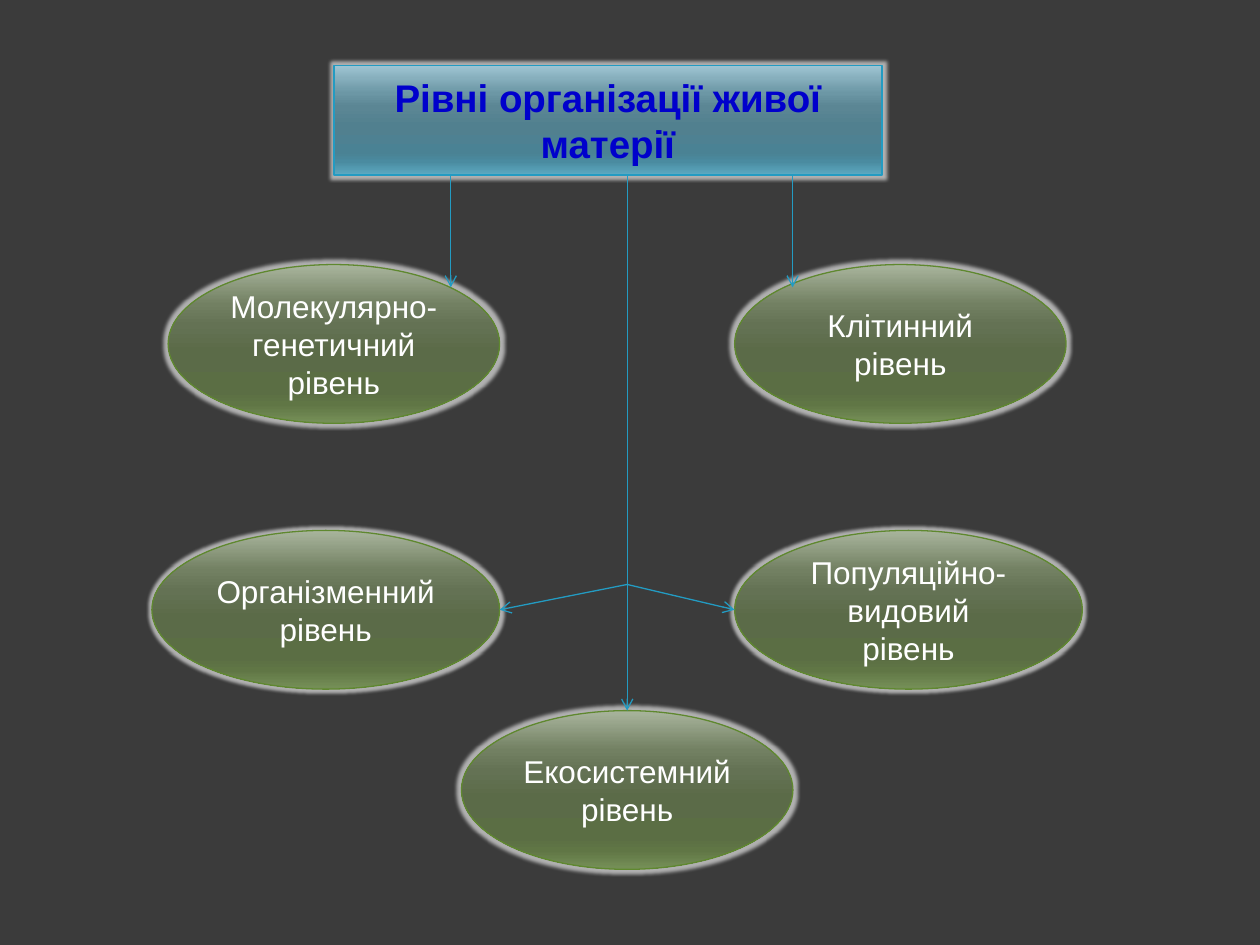
"""Builds a slide with the levels of organisation of living matter."""
from dataclasses import dataclass

from lxml import etree
from pptx import Presentation
from pptx.dml import color
from pptx.enum import shapes, text
from pptx.oxml import ns
from pptx.util import Pt


@dataclass(frozen=True)
class Theme:
    font: str = "Arial"
    title_size: int = 22
    level_size: int = 18
    line_width: float = 0.75
    glow_radius: int = 4
    background: str = "3B3B3B"
    title_text: str = "0000CC"
    level_text: str = "FFFFFF"
    blue_line: str = "239BC2"
    green_line: str = "5F882F"
    glow: str = "FFFFFF"
    stops: tuple = (0, 25, 38, 55, 80, 88, 100)
    blues: tuple = ("9EC4D2", "6C97A5", "5B8694", "51808F", "4A8294", "4A8BA0", "5DAAC2")
    greens: tuple = ("A9B59D", "728062", "647254", "5B6B48", "5B6E44", "607645", "769058")


THEME = Theme()
TITLE = "Рівні організації живої матерії"
TITLE_BOX = (190.8, 37.4, 313.2, 62.6)
TITLE_BOTTOM = TITLE_BOX[1] + TITLE_BOX[3]
AXIS, LEFT_EDGE, RIGHT_EDGE = 358.4, 285.5, 419.8
NARROW, WIDE, HEIGHT = 189.4, 198.7, 90.7
UPPER, LOWER, BOTTOM = 151.2, 303.1, 406.1
FORK, ARROW_END = 334, 164.2
SIDE_Y = LOWER + HEIGHT / 2

LEVELS = [
    ("Організменний рівень", LEFT_EDGE - WIDE, LOWER, WIDE),
    ("Молекулярно-генетичний рівень", LEFT_EDGE - NARROW, UPPER, NARROW),
    ("Клітинний рівень", RIGHT_EDGE, UPPER, NARROW),
    ("Популяційно-видовий рівень", RIGHT_EDGE, LOWER, WIDE),
    ("Екосистемний рівень", AXIS - NARROW / 2, BOTTOM, NARROW),
]
ARROWS = [
    (452.9, TITLE_BOTTOM, 452.9, ARROW_END),
    (257.6, TITLE_BOTTOM, 257.6, ARROW_END),
    (AXIS, TITLE_BOTTOM, AXIS, BOTTOM),
    (AXIS, FORK, RIGHT_EDGE, SIDE_Y),
    (AXIS, FORK, LEFT_EDGE, SIDE_Y),
]


def rgb(value):
    return color.RGBColor.from_string(value)


def add_node(parent, tag, **attributes):
    node = etree.SubElement(parent, ns.qn(tag))
    for name, value in attributes.items():
        node.set(name, str(value))
    return node


def style_line(line, line_color):
    line.color.rgb = rgb(line_color)
    line.width = Pt(THEME.line_width)


def style_shape(shape, colors, line_color):
    shape.fill.gradient()
    shape.fill.gradient_angle = 270
    properties = shape._element.spPr
    stop_list = properties.find(".//" + ns.qn("a:gsLst"))
    for stop in list(stop_list):
        stop_list.remove(stop)
    for position, value in zip(THEME.stops, colors):
        stop = add_node(stop_list, "a:gs", pos=position * 1000)
        add_node(stop, "a:srgbClr", val=value)
    style_line(shape.line, line_color)
    effects = add_node(properties, "a:effectLst")
    glow = add_node(effects, "a:glow", rad=int(Pt(THEME.glow_radius)))
    glow_color = add_node(glow, "a:srgbClr", val=THEME.glow)
    add_node(glow_color, "a:alpha", val=60000)


def write_text(shape, words, size, text_color, bold=False):
    frame = shape.text_frame
    frame.text = words
    frame.word_wrap = True
    frame.auto_size = text.MSO_AUTO_SIZE.NONE
    frame.vertical_anchor = text.MSO_ANCHOR.MIDDLE
    paragraph = frame.paragraphs[0]
    paragraph.alignment = text.PP_ALIGN.CENTER
    font = paragraph.font
    font.name, font.size, font.bold = THEME.font, Pt(size), bold
    font.color.rgb = rgb(text_color)


def add_title(slide):
    title = slide.shapes.title
    title.left, title.top, title.width, title.height = map(Pt, TITLE_BOX)
    style_shape(title, THEME.blues, THEME.blue_line)
    write_text(title, TITLE, THEME.title_size, THEME.title_text, bold=True)
    frame = title.text_frame
    frame.margin_left = frame.margin_right = Pt(3.6)
    frame.margin_top = frame.margin_bottom = Pt(3.6)


def add_level(slide, words, left, top, width):
    ellipse = slide.shapes.add_shape(
        shapes.MSO_SHAPE.OVAL, Pt(left), Pt(top), Pt(width), Pt(HEIGHT))
    style_shape(ellipse, THEME.greens, THEME.green_line)
    write_text(ellipse, words, THEME.level_size, THEME.level_text)


def add_arrow(slide, *ends):
    arrow = slide.shapes.add_connector(shapes.MSO_CONNECTOR.STRAIGHT, *map(Pt, ends))
    style_line(arrow.line, THEME.blue_line)
    add_node(arrow.line._get_or_add_ln(), "a:tailEnd", type="arrow")
    add_node(arrow._element.spPr, "a:effectLst")


def main():
    presentation = Presentation()
    presentation.slide_width, presentation.slide_height = Pt(720), Pt(540)
    slide = presentation.slides.add_slide(presentation.slide_layouts[5])
    slide.background.fill.solid()
    slide.background.fill.fore_color.rgb = rgb(THEME.background)
    add_title(slide)
    for level in LEVELS:
        add_level(slide, *level)
    for arrow in ARROWS:
        add_arrow(slide, *arrow)
    presentation.save("out.pptx")


if __name__ == "__main__":
    main()
